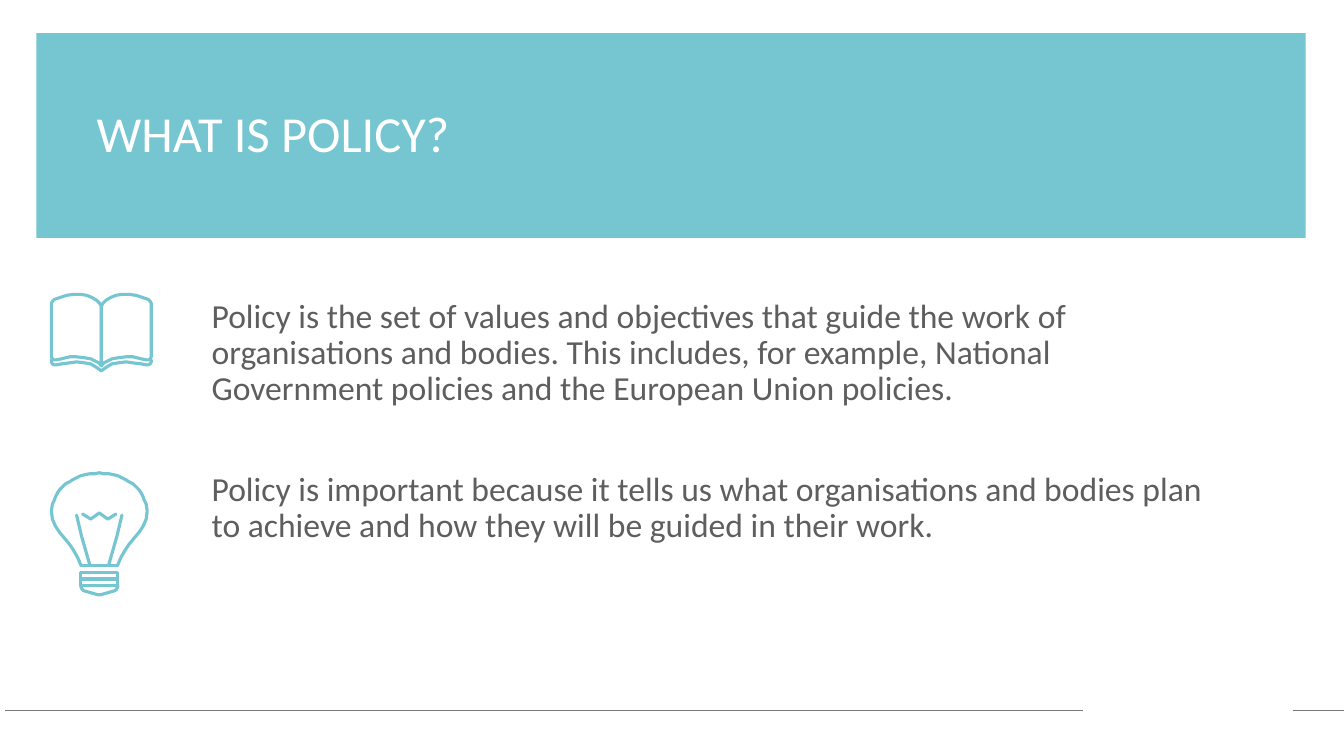
from lxml.etree import SubElement
from pptx import Presentation
from pptx.dml.color import RGBColor
from pptx.enum.shapes import MSO_CONNECTOR as Link, MSO_SHAPE as Form
from pptx.enum.text import MSO_ANCHOR as Anchor
from pptx.oxml.ns import qn
from pptx.util import Inches, Pt

TEAL = RGBColor(0x76, 0xC6, 0xD2)
GREY = RGBColor(0x5E, 0x5E, 0x5E)
RULE = RGBColor(0x79, 0x79, 0x79)
WHITE = RGBColor(0xFF, 0xFF, 0xFF)

BOOK_MID = 1.005
BULB_MID = 0.985
BULB_LEFT, BULB_RIGHT = 0.8, 1.17
STROKE = 2.25

# Left halves of the symmetric icons, in inches
COVER = [
    (0.51, 3.57), (0.51, 3.59), (0.52, 3.61), (0.54, 3.62), (0.56, 3.62),
    (0.61, 3.61), (0.69, 3.6), (0.76, 3.59), (0.84, 3.6), (0.9, 3.61),
    (0.95, 3.64), (0.98, 3.66), (1.005, 3.68)]
PAGE = [
    (1.005, 3.04), (1.005, 3.63), (0.98, 3.6), (0.94, 3.58), (0.9, 3.56),
    (0.84, 3.55), (0.76, 3.54), (0.69, 3.54), (0.61, 3.56), (0.56, 3.57),
    (0.53, 3.57), (0.52, 3.56), (0.51, 3.54), (0.51, 3.01), (0.52, 2.99),
    (0.54, 2.97), (0.6, 2.95), (0.66, 2.93), (0.73, 2.92), (0.8, 2.92),
    (0.86, 2.93), (0.91, 2.95), (0.96, 2.98), (0.99, 3.01), (1.005, 3.04)]
GLASS = [
    (0.8, 5.6), (0.77, 5.53), (0.73, 5.46), (0.69, 5.4), (0.64, 5.34),
    (0.59, 5.28), (0.55, 5.22), (0.52, 5.15), (0.51, 5.07), (0.52, 5),
    (0.54, 4.96), (0.55, 4.93), (0.57, 4.89), (0.59, 4.86), (0.62, 4.83),
    (0.65, 4.8), (0.69, 4.78), (0.72, 4.76), (0.76, 4.74), (0.8, 4.72),
    (0.84, 4.71), (0.89, 4.7), (0.94, 4.7), (0.985, 4.69)]
STEM = [(0.89, 5.6), (0.81, 5.32), (0.76, 5.11)]
COIL = [(0.82, 5.1), (0.9, 5.15), (0.97, 5.1), (0.985, 5.09)]
TIP = [(0.985, 5.9), (0.97, 5.9), (0.83, 5.86), (0.81, 5.84), (0.8, 5.81)]

BODY = [
    "Policy is the set of values and objectives that guide the work of "
    "organisations and bodies. This includes, for example, National "
    "Government policies and the European Union policies.",
    "Policy is important because it tells us what organisations and bodies "
    "plan to achieve and how they will be guided in their work."]


def flip(dots, mid):
    return [(2 * mid - x, y) for x, y in dots]


def whole(half, mid):
    """Join a half outline with its mirror image."""
    return half + flip(half, mid)[::-1][1:]


def soften(shape):
    """Give a stroke round ends and joins."""
    edge = shape._element.spPr.find(qn("a:ln"))
    edge.set("cap", "rnd")
    SubElement(edge, qn("a:round"))


def outline(shape):
    shape.shadow.inherit = False
    shape.fill.background()
    shape.line.color.rgb = TEAL
    shape.line.width = Pt(STROKE)
    soften(shape)


def trace(slide, dots, close=False):
    spots = [(Inches(x), Inches(y)) for x, y in dots]
    pen = slide.shapes.build_freeform(*spots[0])
    pen.add_line_segments(spots[1:], close=close)
    outline(pen.convert_to_shape())


def add_line(slide, left, right, y, color, width):
    line = slide.shapes.add_connector(
        Link.STRAIGHT, Inches(left), Inches(y), Inches(right), Inches(y))
    line.line.color.rgb = color
    line.line.width = Pt(width)
    SubElement(line._element.spPr, qn("a:effectLst"))
    return line


def add_text(slide, box, lines, size, color, gap=0):
    frame = slide.shapes.add_textbox(*map(Inches, box)).text_frame
    frame.word_wrap = True
    frame.vertical_anchor = Anchor.TOP
    for i, line in enumerate(lines):
        para = frame.add_paragraph() if i else frame.paragraphs[0]
        para.line_spacing = 0.9
        para.space_before = Pt(gap if i else 0)
        run = para.add_run()
        run.text = line
        run.font.name = "Calibri"
        run.font.size = Pt(size)
        run.font.color.rgb = color


def add_band(slide):
    band = slide.shapes.add_shape(
        Form.RECTANGLE, *map(Inches, (0.36, 0.33, 12.59, 2.03)))
    band.shadow.inherit = False
    band.fill.solid()
    band.fill.fore_color.rgb = TEAL
    band.line.fill.background()


def add_book(slide):
    for half, close in ((COVER, False), (PAGE, True)):
        trace(slide, half, close)
        trace(slide, flip(half, BOOK_MID), close)


def add_bulb(slide):
    # Screw base
    for top in (5.68, 5.74):
        outline(slide.shapes.add_shape(
            Form.RECTANGLE, Inches(BULB_LEFT), Inches(top),
            Inches(BULB_RIGHT - BULB_LEFT), Inches(0.07)))
    trace(slide, whole(TIP[::-1], BULB_MID), close=True)
    # Glass and filament
    trace(slide, whole(GLASS, BULB_MID))
    trace(slide, STEM)
    trace(slide, flip(STEM, BULB_MID))
    trace(slide, whole(COIL, BULB_MID))
    soften(add_line(slide, BULB_LEFT, BULB_RIGHT, 5.61, TEAL, STROKE))


def main():
    deck = Presentation()
    deck.slide_width = Inches(13.33)
    deck.slide_height = Inches(7.5)
    slide = deck.slides.add_slide(deck.slide_layouts[6])

    # Header band and footer rule
    add_band(slide)
    for left, right in ((0.05, 10.74), (12.82, 13.33)):
        add_line(slide, left, right, 7.05, RULE, 0.5)

    # Title and body
    add_text(slide, (0.86, 1.03, 11.55, 0.76), ["WHAT IS POLICY?"], 36, WHITE)
    add_text(slide, (2, 2.92, 10.19, 3.55), BODY, 24, GREY, gap=46)

    # Icons
    add_book(slide)
    add_bulb(slide)
    deck.save("out.pptx")


if __name__ == "__main__":
    main()
